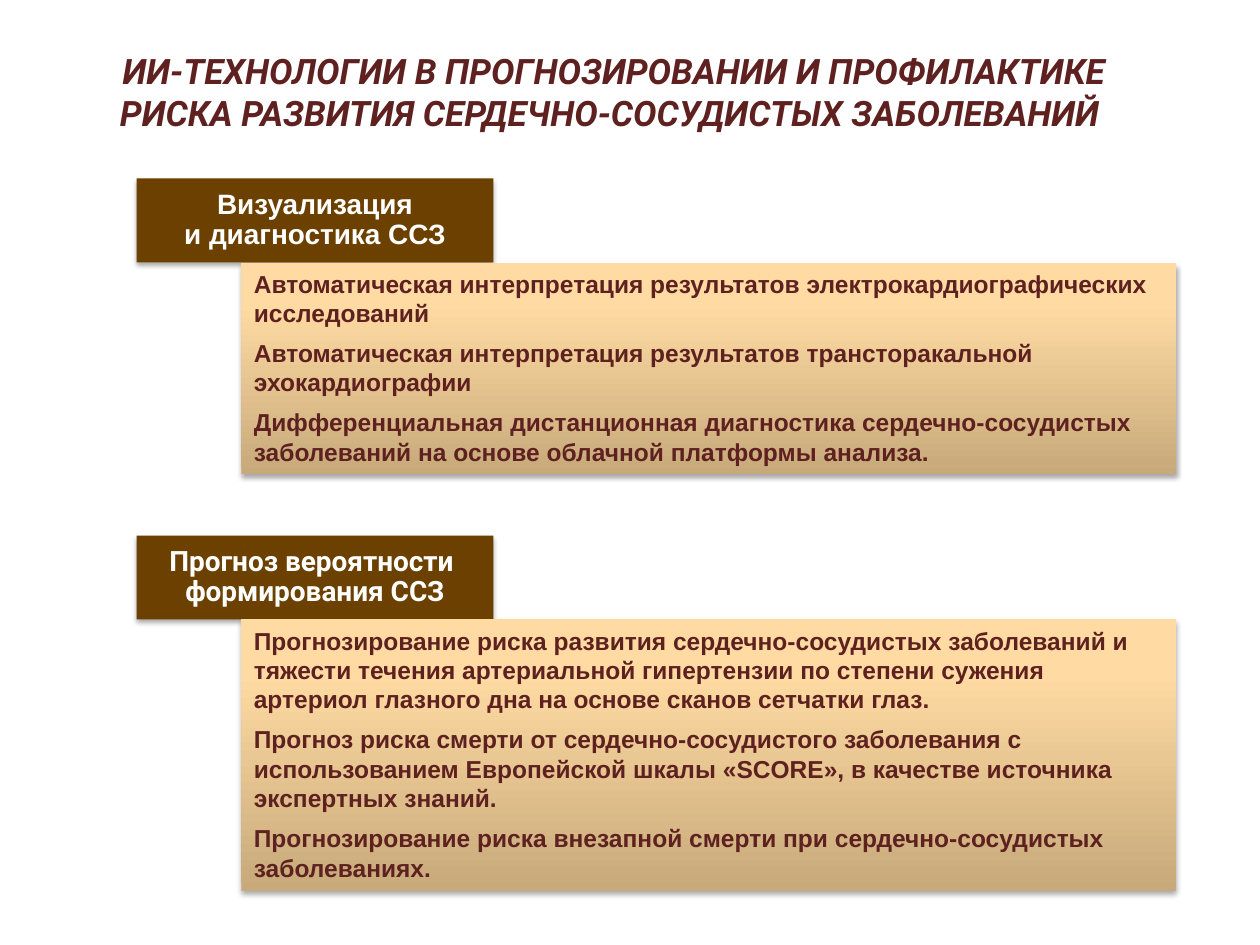
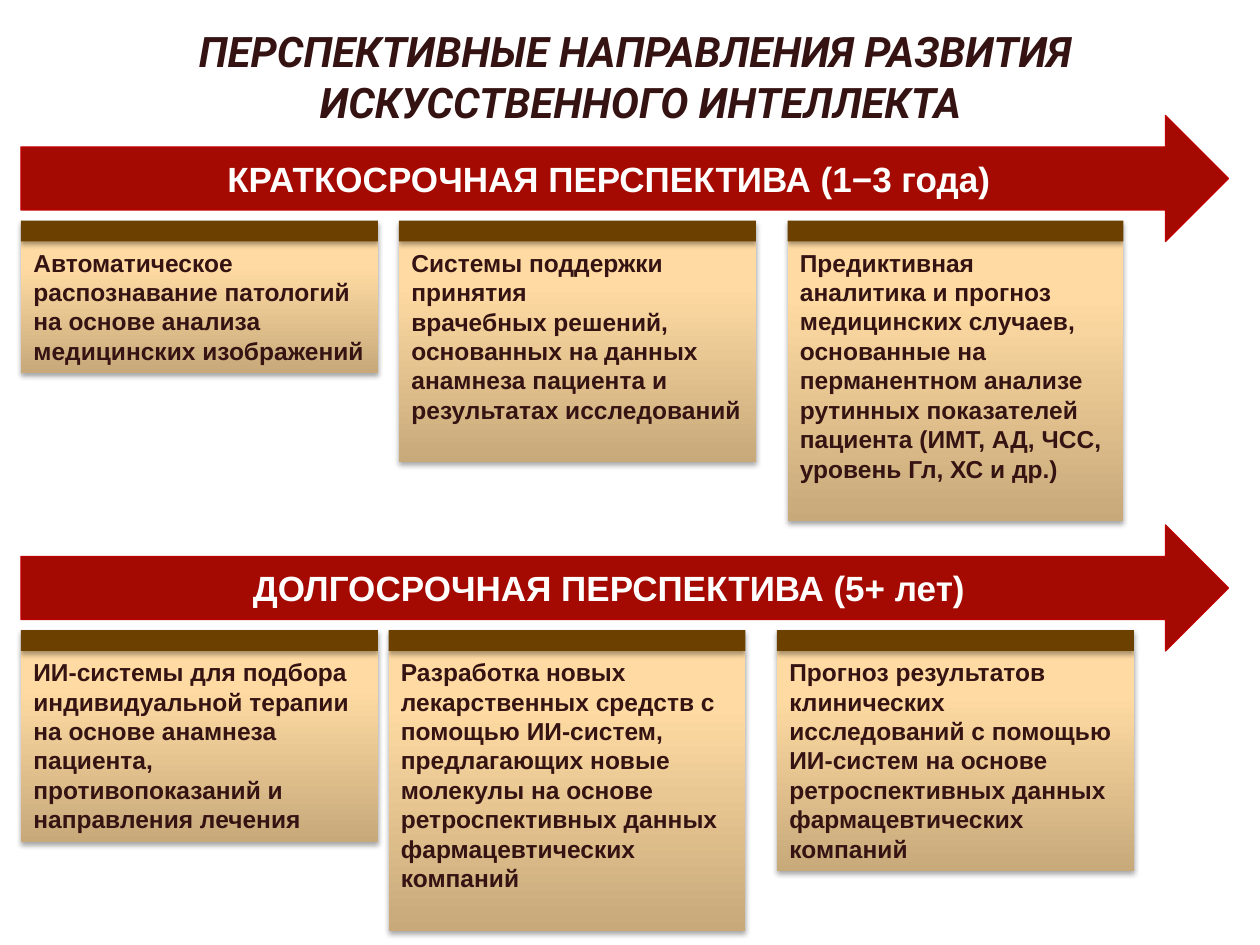
from copy import deepcopy

from lxml import etree
from pptx import Presentation
from pptx.dml.color import RGBColor
from pptx.enum import shapes, text
from pptx.oxml.ns import qn
from pptx.util import Pt

MAROON = RGBColor(0x5E, 0x21, 0x20)
DARK = RGBColor(0x34, 0x13, 0x12)
WHITE = RGBColor(0xFF, 0xFF, 0xFF)
BROWN = RGBColor(0x6C, 0x41, 0x00)
RED = RGBColor(0xA4, 0x0A, 0x01)
RED_LINE = RGBColor(0xC0, 0x00, 0x00)
SAND = [
    (0, RGBColor(0xC7, 0xA9, 0x7A)),
    (0.8, RGBColor(0xFF, 0xDB, 0xA3)),
    (1, RGBColor(0xFF, 0xDC, 0xA5)),
]
BAR_H = 12
HEADING_W, HEADING_H = 204, 60
ARROW_W, ARROW_H = 690, 72

SECTIONS = [
    ((78, 102, 594, 181), "Arial", ["Визуализация", "и диагностика ССЗ"], [
        "Автоматическая интерпретация результатов электрокардиографических исследований",
        "Автоматическая интерпретация результатов трансторакальной эхокардиографии",
        "Дифференциальная дистанционная диагностика сердечно-сосудистых заболеваний "
        "на основе облачной платформы анализа.",
    ]),
    ((78, 306, 594, 215), "Roboto", ["Прогноз вероятности ", "формирования ССЗ"], [
        "Прогнозирование риска развития сердечно-сосудистых заболеваний и тяжести течения "
        "артериальной гипертензии по степени сужения артериол глазного дна на основе "
        "сканов сетчатки глаз.",
        "Прогноз риска смерти от сердечно-сосудистого заболевания с использованием "
        "Европейской шкалы «SCORE», в качестве источника экспертных знаний.",
        "Прогнозирование риска внезапной смерти при сердечно-сосудистых заболеваниях.",
    ]),
]

HORIZONS = [
    (66, "КРАТКОСРОЧНАЯ ПЕРСПЕКТИВА (1−3 года)", [
        (12, 204, 75, [
            "Автоматическое распознавание патологий на основе анализа медицинских изображений",
        ]),
        (228, 204, 126, [
            "Системы поддержки принятия",
            "врачебных решений, основанных на данных",
            "анамнеза пациента и",
            "результатах исследований",
        ]),
        (450, 192, 160, [
            "Предиктивная",
            "аналитика и прогноз медицинских случаев,",
            "основанные на перманентном анализе рутинных показателей пациента "
            "(ИМТ, АД, ЧСС, уровень Гл, ХС и др.)",
        ]),
    ]),
    (300, "ДОЛГОСРОЧНАЯ ПЕРСПЕКТИВА (5+ лет)", [
        (12, 204, 109, [
            "ИИ-системы для подбора индивидуальной терапии на основе анамнеза пациента, "
            "противопоказаний и направления лечения",
        ]),
        (222, 204, 160, [
            "Разработка новых лекарственных средств с помощью ИИ-систем, предлагающих новые "
            "молекулы на основе ретроспективных данных фармацевтических компаний",
        ]),
        (444, 204, 126, [
            "Прогноз результатов клинических исследований с помощью ИИ-систем на основе "
            "ретроспективных данных фармацевтических компаний",
        ]),
    ]),
]


def write(sp, lines, size, color, font="Arial", align=text.PP_ALIGN.LEFT,
          anchor=text.MSO_ANCHOR.TOP, wrap=True, italic=False, spacing=None, after=0):
    tf = sp.text_frame
    tf.text = "\n".join(lines)
    tf.word_wrap = wrap
    tf.auto_size = text.MSO_AUTO_SIZE.NONE
    tf.vertical_anchor = anchor
    for p in tf.paragraphs:
        p.alignment = align
        p.line_spacing = spacing
        p.space_after = Pt(after)
        for r in p.runs:
            r.font.name = font
            r.font.size = Pt(size)
            r.font.bold = True
            r.font.italic = italic
            r.font.color.rgb = color


def add_title(s, box, title, size, color):
    sp = s.shapes.title
    sp.left, sp.top, sp.width, sp.height = map(Pt, box)
    write(sp, [title], size, color, "Roboto", text.PP_ALIGN.CENTER,
          text.MSO_ANCHOR.MIDDLE, italic=True)


def add_block(s, box, color, kind=shapes.MSO_SHAPE.RECTANGLE):
    sp = s.shapes.add_shape(kind, *map(Pt, box))
    sp.fill.solid()
    sp.fill.fore_color.rgb = color
    sp.line.fill.background()
    sp.shadow.inherit = False
    return sp


def add_shadow(sp):
    effects = sp._element.spPr.find(qn("a:effectLst"))
    shadow = etree.SubElement(effects, qn("a:outerShdw"), blurRad="39400", dist="22900",
                              dir="5400000", rotWithShape="0")
    color = etree.SubElement(shadow, qn("a:srgbClr"), val="000000")
    etree.SubElement(color, qn("a:alpha"), val="35000")


def add_panel(s, box, lines, color, after=0):
    sp = add_block(s, box, BROWN)
    add_shadow(sp)
    fill = sp.fill
    fill.gradient()
    fill.gradient_angle = 90
    stops = sp._element.spPr.find(".//" + qn("a:gsLst"))
    stops.append(deepcopy(stops[-1]))
    for stop, (position, rgb) in zip(fill.gradient_stops, SAND):
        stop.position = position
        stop.color.rgb = rgb
    write(sp, lines, 14, color, after=after)


def add_section(s, box, font, heading, lines):
    x, y, w, h = box
    top = HEADING_H - BAR_H
    sp = add_block(s, (x, y, HEADING_W, top), BROWN)
    add_shadow(sp)
    write(sp, heading, 16, WHITE, font, text.PP_ALIGN.CENTER,
          text.MSO_ANCHOR.MIDDLE, wrap=False, spacing=0.9)
    indent = 60
    add_panel(s, (x + indent, y + top, w - indent, h - HEADING_H), lines, MAROON, after=6)


def add_card(s, box, lines):
    x, y, w, h = box
    add_panel(s, (x, y + BAR_H, w, h), lines, DARK)
    add_shadow(add_block(s, (x, y, w, BAR_H), BROWN))


def add_horizon(s, top, name, cards):
    arrow = add_block(s, (12, top, ARROW_W, ARROW_H), RED, shapes.MSO_SHAPE.RIGHT_ARROW)
    arrow.line.color.rgb = RED_LINE
    arrow.line.width = Pt(0.75)
    write(arrow, [name], 20, WHITE, align=text.PP_ALIGN.CENTER,
          anchor=text.MSO_ANCHOR.MIDDLE, wrap=False)
    for x, w, h, lines in cards:
        add_card(s, (x, top + ARROW_H - BAR_H, w, h), lines)


def build_risk_slide(prs):
    s = prs.slides.add_slide(prs.slide_layouts[5])
    add_title(s, (0, 24, 702, 56),
              "ИИ-ТЕХНОЛОГИИ В ПРОГНОЗИРОВАНИИ И ПРОФИЛАКТИКЕ\v"
              "РИСКА РАЗВИТИЯ СЕРДЕЧНО-СОСУДИСТЫХ ЗАБОЛЕВАНИЙ ", 20, MAROON)
    for section in SECTIONS:
        add_section(s, *section)


def build_prospects_slide(prs):
    s = prs.slides.add_slide(prs.slide_layouts[5])
    add_title(s, (12, 12, 708, 63),
              "ПЕРСПЕКТИВНЫЕ НАПРАВЛЕНИЯ РАЗВИТИЯ \vИСКУССТВЕННОГО ИНТЕЛЛЕКТА", 24, DARK)
    for horizon in HORIZONS:
        add_horizon(s, *horizon)


def main():
    prs = Presentation()
    prs.slide_width, prs.slide_height = Pt(720), Pt(540)
    build_risk_slide(prs)
    build_prospects_slide(prs)
    prs.save("out.pptx")


if __name__ == "__main__":
    main()
